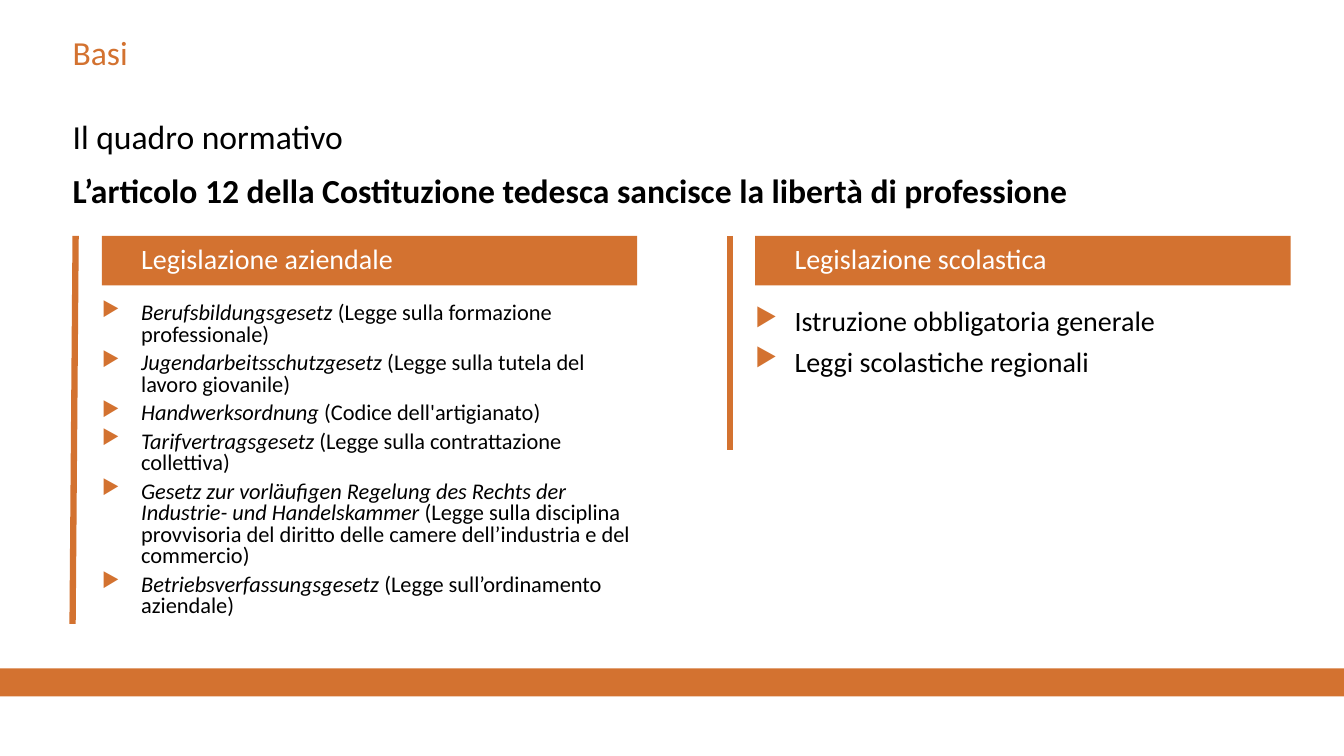
from dataclasses import dataclass

from lxml.etree import SubElement
from pptx import Presentation
from pptx.dml.color import RGBColor as RGB
from pptx.enum.shapes import MSO_CONNECTOR as CONN, MSO_SHAPE as SHAPE
from pptx.enum.text import MSO_ANCHOR as ANCHOR, PP_ALIGN as ALIGN
from pptx.oxml.ns import qn
from pptx.util import Pt

EMU_PER_PX = 9144


@dataclass(frozen=True)
class Theme:
    font: str = "Calibri"
    accent: str = "D37230"
    ink: str = "000000"
    paper: str = "FFFFFF"
    heading: int = 24
    body: int = 20
    small: int = 16
    rule: float = 4.5


THEME = Theme()
INDENT = 39
COLUMN_STEP = 648

COMPANY_LAWS = [
    ("Berufsbildungsgesetz", " (Legge sulla formazione professionale)"),
    ("Jugendarbeitsschutzgesetz", " (Legge sulla tutela del lavoro giovanile)"),
    ("Handwerksordnung", " (Codice dell'artigianato)"),
    ("Tarifvertragsgesetz", " (Legge sulla contrattazione collettiva)"),
    ("Gesetz zur vorläufigen Regelung des Rechts der Industrie- und Handelskammer ",
     "(Legge sulla disciplina provvisoria del diritto delle camere "
     "dell’industria e del commercio)"),
    ("Betriebsverfassungsgesetz ", "(Legge sull’ordinamento aziendale)"),
]
SCHOOL_LAWS = [
    ("", "Istruzione obbligatoria generale"),
    ("", "Leggi scolastiche regionali"),
]


def px(n):
    return n * EMU_PER_PX


def add_bullet(p):
    pPr = p._p.get_or_add_pPr()
    pPr.set("marL", str(px(INDENT)))
    pPr.set("indent", str(px(-INDENT)))
    color = SubElement(pPr, qn("a:buClr"))
    SubElement(color, qn("a:srgbClr"), val=THEME.accent)
    SubElement(pPr, qn("a:buSzPct"), val="90000")
    SubElement(pPr, qn("a:buChar"), char="▶")


def add_text(p, text, *, size, color=THEME.ink, bold=False, italic=False):
    r = p.add_run()
    r.text = text
    r.font.name = THEME.font
    r.font.size = Pt(size)
    r.font.bold = bold
    r.font.italic = italic
    r.font.color.rgb = RGB.from_string(color)


def set_frame(s, inset=0, anchor=ANCHOR.TOP):
    tf = s.text_frame
    tf.word_wrap = True
    tf.margin_left = px(inset)
    tf.margin_top = tf.margin_right = tf.margin_bottom = 0
    tf.vertical_anchor = anchor
    return tf


def add_box(sl, x, y, w, h):
    return set_frame(sl.shapes.add_textbox(px(x), px(y), px(w), px(h)))


def next_paragraph(tf, i, space):
    if i == 0:
        return tf.paragraphs[0]
    p = tf.add_paragraph()
    p.space_before = Pt(space)
    return p


def add_bar(sl, x, y, w, h):
    s = sl.shapes.add_shape(SHAPE.RECTANGLE, px(x), px(y), px(w), px(h))
    s.shadow.inherit = False
    s.fill.solid()
    s.fill.fore_color.rgb = RGB.from_string(THEME.accent)
    s.line.fill.background()
    return s


def add_rule(sl, x1, y1, x2, y2):
    c = sl.shapes.add_connector(CONN.STRAIGHT, px(x1), px(y1), px(x2), px(y2))
    c.line.color.rgb = RGB.from_string(THEME.accent)
    c.line.width = Pt(THEME.rule)
    SubElement(c._element.spPr, qn("a:effectLst"))


def add_heading(sl, x, y, w):
    tf = add_box(sl, x, y, w, 49)
    add_text(tf.paragraphs[0], "Basi", size=THEME.heading, color=THEME.accent)
    tf = add_box(sl, x, y + 83, w, 110)
    lines = [
        ("Il quadro normativo", False),
        ("L’articolo 12 della Costituzione tedesca sancisce la libertà di professione", True),
    ]
    for i, (text, bold) in enumerate(lines):
        add_text(next_paragraph(tf, i, 10), text, size=THEME.heading, bold=bold)


def add_column(sl, x, y, w, h, *, title, laws, size, spacing, rule):
    tf = set_frame(add_bar(sl, x, y, w, 49), INDENT, ANCHOR.MIDDLE)
    p = tf.paragraphs[0]
    p.alignment = ALIGN.LEFT
    p.line_spacing = 0.9
    add_text(p, title, size=THEME.body, color=THEME.paper)

    tf = add_box(sl, x, y + 67, w, h - 67)
    for i, (name, note) in enumerate(laws):
        p = next_paragraph(tf, i, 5)
        p.line_spacing = spacing
        add_bullet(p)
        if name:
            add_text(p, name, size=size, italic=True)
        add_text(p, note, size=size)

    top_gap, bottom_gap, length = rule
    add_rule(sl, x - top_gap, y, x - bottom_gap, y + length)


def main():
    prs = Presentation()
    prs.slide_width, prs.slide_height = px(1333), px(750)
    sl = prs.slides.add_slide(prs.slide_layouts[6])

    add_bar(sl, 0, 663, 1333, 28)
    add_heading(sl, 72, 32, 1209)
    columns = [
        dict(title="Legislazione aziendale", laws=COMPANY_LAWS,
             size=THEME.small, spacing=0.8, rule=(26, 29, 385)),
        dict(title="Legislazione scolastica", laws=SCHOOL_LAWS,
             size=THEME.body, spacing=1.0, rule=(25, 25, 212)),
    ]
    for i, column in enumerate(columns):
        add_column(sl, 101 + i * COLUMN_STEP, 234, 531, 385, **column)

    prs.save("out.pptx")


if __name__ == "__main__":
    main()
